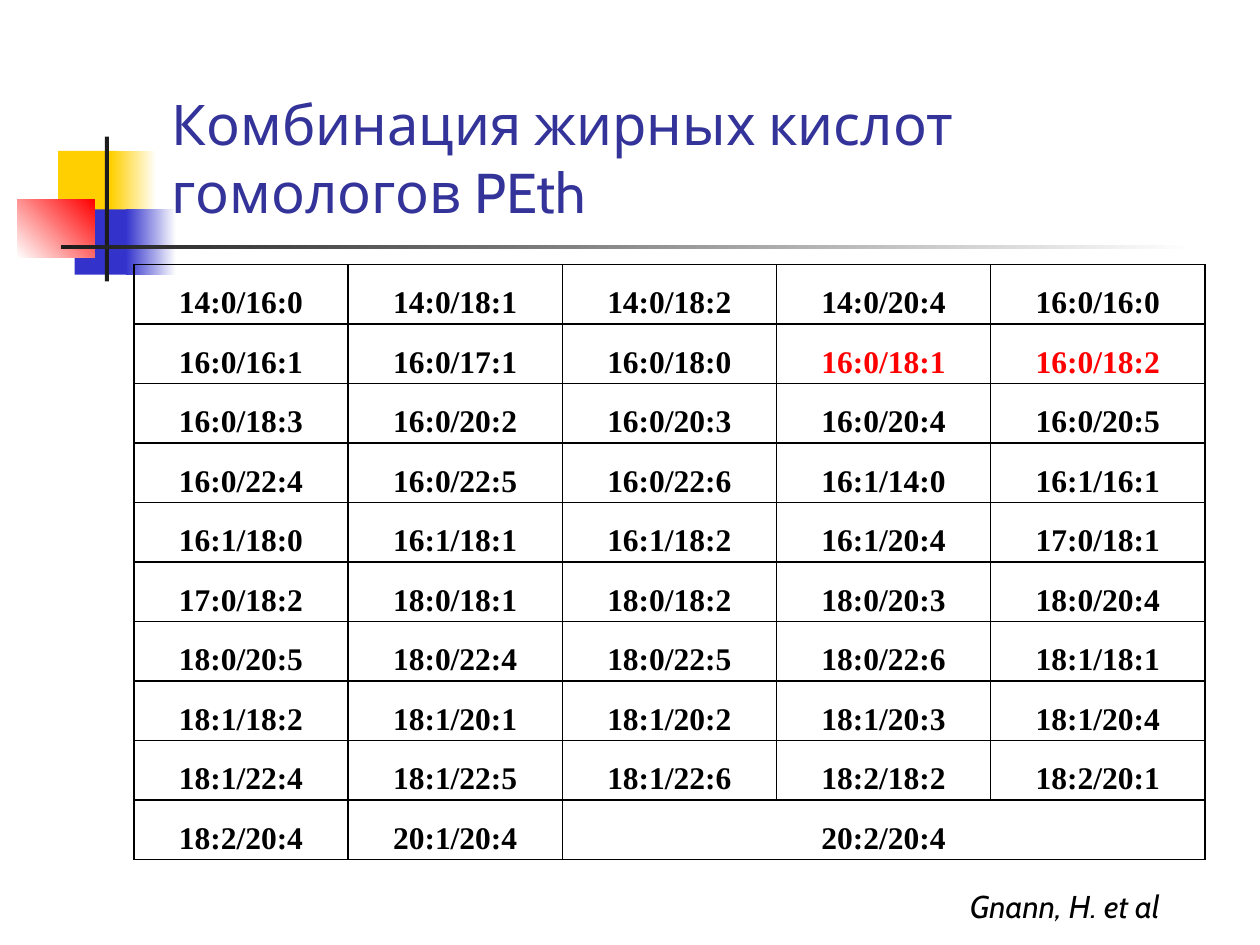
"""Builds a slide with a table of fatty acid combinations in PEth homologues."""
from pptx import Presentation
from pptx.dml.color import RGBColor as RGB
from pptx.enum.shapes import MSO_SHAPE as SHAPE
from pptx.enum.text import MSO_ANCHOR as ANCHOR, PP_ALIGN as ALIGN
from pptx.oxml import parse_xml
from pptx.oxml.ns import nsdecls
from pptx.util import Pt

COLORS = {
    "yellow": "FFCF01", "blue": "3333CC", "red": "FF0000", "dark": "1C1C1C",
    "white": "FFFFFF", "black": "000000", "title": "333399",
}
DECOR = [
    ((33.2, 86.2, 34.4, 37.4), ["yellow"], 0),
    ((63.4, 86.2, 25.9, 37.4), ["yellow", "white"], 0),
    ((42.7, 119.6, 33.1, 37.4), ["blue"], 0),
    ((72, 119.6, 28.8, 37.4), ["blue", "white"], 0),
    ((9.8, 113.8, 44.2, 33.4), ["white", "red"], 45),
    ((59.9, 78, 2.4, 82.8), ["dark"], 0),
    ((34.8, 140, 648, 2.5), ["dark", "white"], 0),
]
ACIDS = [
    "14:0/16:0 14:0/18:1 14:0/18:2 14:0/20:4 16:0/16:0",
    "16:0/16:1 16:0/17:1 16:0/18:0 16:0/18:1 16:0/18:2",
    "16:0/18:3 16:0/20:2 16:0/20:3 16:0/20:4 16:0/20:5",
    "16:0/22:4 16:0/22:5 16:0/22:6 16:1/14:0 16:1/16:1",
    "16:1/18:0 16:1/18:1 16:1/18:2 16:1/20:4 17:0/18:1",
    "17:0/18:2 18:0/18:1 18:0/18:2 18:0/20:3 18:0/20:4",
    "18:0/20:5 18:0/22:4 18:0/22:5 18:0/22:6 18:1/18:1",
    "18:1/18:2 18:1/20:1 18:1/20:2 18:1/20:3 18:1/20:4",
    "18:1/22:4 18:1/22:5 18:1/22:6 18:2/18:2 18:2/20:1",
    "18:2/20:4 20:1/20:4 20:2/20:4",
]
HIGHLIGHTED = {"16:0/18:1", "16:0/18:2"}
COLS = 5


def rgb(name):
    return RGB.from_string(COLORS[name])


def add_run(p, text, size, font, color, bold=False, italic=False):
    r = p.add_run()
    r.text = text
    r.font.size, r.font.name = Pt(size), font
    r.font.bold, r.font.italic = bold, italic
    r.font.color.rgb = rgb(color)


def add_block(s, box, colors, angle):
    sp = s.shapes.add_shape(SHAPE.RECTANGLE, *map(Pt, box))
    sp.shadow.inherit = False
    sp.line.fill.background()
    if len(colors) == 1:
        sp.fill.solid()
        sp.fill.fore_color.rgb = rgb(colors[0])
        return
    sp.fill.gradient()
    sp.fill.gradient_angle = angle
    for stop, color in zip(sp.fill.gradient_stops, colors):
        stop.color.rgb = rgb(color)


def add_text(s, box, lines, size, color, anchor=ANCHOR.TOP, italic=False):
    tf = s.shapes.add_textbox(*map(Pt, box)).text_frame
    tf.word_wrap = True
    tf.vertical_anchor = anchor
    p = tf.paragraphs[0]
    for i, line in enumerate(lines):
        if i:
            p.add_line_break()
        add_run(p, line, size, "Cabin", color, italic=italic)


def set_borders(cell):
    tc_pr = cell._tc.get_or_add_tcPr()
    for i, side in enumerate(("lnL", "lnR", "lnT", "lnB")):
        tc_pr.insert(i, parse_xml(
            f'<a:{side} {nsdecls("a")} w="{Pt(1)}"><a:solidFill>'
            f'<a:srgbClr val="{COLORS["black"]}"/></a:solidFill></a:{side}>'))


def fill_cell(cell, text):
    cell.fill.background()
    set_borders(cell)
    cell.vertical_anchor = ANCHOR.MIDDLE
    cell.margin_left = cell.margin_right = Pt(5)
    cell.margin_top = cell.margin_bottom = 0
    p = cell.text_frame.paragraphs[0]
    p.alignment = ALIGN.CENTER
    p.line_spacing = 1.5
    if text:
        color = "red" if text in HIGHLIGHTED else "black"
        add_run(p, text, 18, "Times New Roman", color, bold=True)


def add_acid_table(s, box):
    table = s.shapes.add_table(len(ACIDS), COLS, *map(Pt, box)).table
    table.first_row = table.horz_banding = False
    for col in table.columns:
        col.width = Pt(box[2] / COLS)
    for i, line in enumerate(ACIDS):
        table.rows[i].height = Pt(box[3] / len(ACIDS))
        names = line.split()
        for j in range(COLS):
            fill_cell(table.cell(i, j), names[j] if j < len(names) else "")
        if len(names) < COLS:
            table.cell(i, len(names) - 1).merge(table.cell(i, COLS - 1))


def main():
    prs = Presentation()
    prs.slide_width, prs.slide_height = Pt(720), Pt(540)
    s = prs.slides.add_slide(prs.slide_layouts[6])
    for box, colors, angle in DECOR:
        add_block(s, box, colors, angle)
    add_text(s, (91, 16.6, 613.4, 115.2),
             ["Комбинация жирных кислот ", "гомологов PEth"],
             32, "title", anchor=ANCHOR.BOTTOM)
    add_acid_table(s, (76.5, 151.2, 612, 340))
    add_text(s, (547.2, 503.3, 198.7, 28.8), ["Gnann, H. et al"],
             18, "black", italic=True)
    prs.save("out.pptx")


if __name__ == "__main__":
    main()
